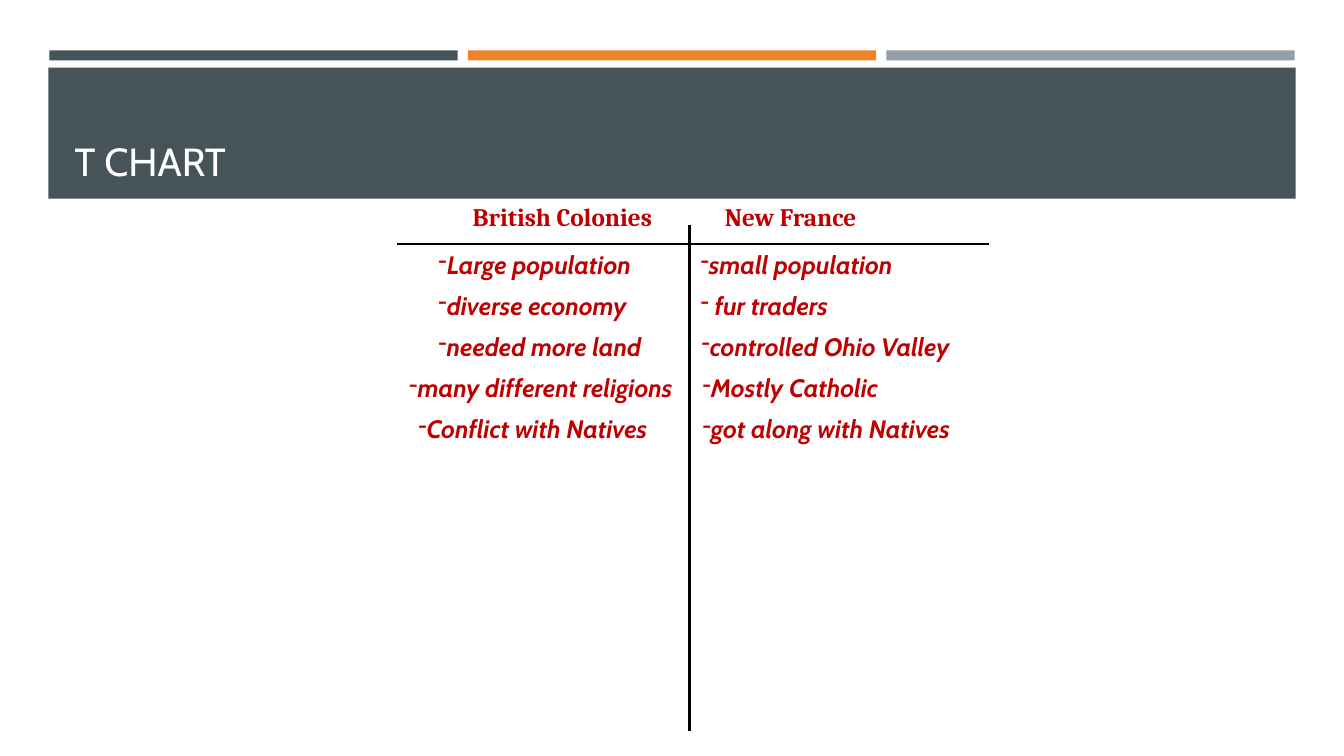
import pptx
import pptx.util
import pptx.dml.color
import pptx.enum.shapes
import pptx.enum.text
import pptx.oxml.ns
import lxml.etree

Inches = pptx.util.Inches
Pt = pptx.util.Pt
RGBColor = pptx.dml.color.RGBColor
qn = pptx.oxml.ns.qn

SLATE = RGBColor(0x46, 0x53, 0x59)
ORANGE = RGBColor(0xED, 0x84, 0x28)
GREY = RGBColor(0x96, 0x9F, 0xA7)
WHITE = RGBColor(0xFF, 0xFF, 0xFF)
BLACK = RGBColor(0x00, 0x00, 0x00)
RED = RGBColor(0xC0, 0x00, 0x00)

ROW_TOP, ROW_STEP, ROW_HEIGHT = 2.42, 0.407, 0.4

# Each entry: left, width, text
BRITISH_POINTS = [
    (4.25, 2.19, "Large population"),
    (4.25, 2.11, "diverse economy"),
    (4.25, 2.27, "needed more land"),
    (3.96, 2.89, "many different religions"),
    (4.05, 2.61, "Conflict with Natives"),
]
FRENCH_POINTS = [
    (6.85, 2.14, "small population"),
    (6.85, 1.52, " fur traders"),
    (6.86, 2.7, "controlled Ohio Valley"),
    (6.87, 2.05, "Mostly Catholic"),
    (6.87, 2.77, "got along with Natives"),
]


def add_bar(slide, left, top, width, height, color):
    bar = slide.shapes.add_shape(
        pptx.enum.shapes.MSO_SHAPE.RECTANGLE,
        Inches(left), Inches(top), Inches(width), Inches(height))
    bar.shadow.inherit = False
    bar.fill.solid()
    bar.fill.fore_color.rgb = color
    bar.line.fill.background()


def add_rule(slide, x1, y1, x2, y2):
    rule = slide.shapes.add_connector(
        pptx.enum.shapes.MSO_CONNECTOR.STRAIGHT,
        Inches(x1), Inches(y1), Inches(x2), Inches(y2))
    rule.line.color.rgb = BLACK
    rule.line.width = Pt(1.75)
    lxml.etree.SubElement(rule._element.spPr, qn("a:effectLst"))


def style_text(paragraph, font_name, size, color, bold=False, italic=False):
    for run in paragraph.runs:
        run.font.name = font_name
        run.font.size = Pt(size)
        run.font.color.rgb = color
        run.font.bold = bold
        run.font.italic = italic


def add_label(slide, left, top, width, text, wrap):
    label = slide.shapes.add_textbox(
        Inches(left), Inches(top), Inches(width), Inches(ROW_HEIGHT))
    frame = label.text_frame
    frame.word_wrap = wrap
    frame.auto_size = pptx.enum.text.MSO_AUTO_SIZE.SHAPE_TO_FIT_TEXT
    frame.text = text
    return frame.paragraphs[0]


def add_points(slide, points):
    for row, (left, width, text) in enumerate(points):
        point = add_label(slide, left, ROW_TOP + row * ROW_STEP, width, text, False)
        style_text(point, "Cabin", 18, RED, bold=True, italic=True)
        properties = point._p.get_or_add_pPr()
        lxml.etree.SubElement(properties, qn("a:buChar")).set("char", "-")


def set_title(slide, text):
    title = slide.shapes.title
    title.left, title.top = Inches(0.64), Inches(0.77)
    title.width, title.height = Inches(12.06), Inches(1.11)
    frame = title.text_frame
    frame.text = text
    frame.auto_size = pptx.enum.text.MSO_AUTO_SIZE.NONE
    frame.vertical_anchor = pptx.enum.text.MSO_ANCHOR.BOTTOM
    frame.paragraphs[0].alignment = pptx.enum.text.PP_ALIGN.LEFT
    style_text(frame.paragraphs[0], "Cabin", 28, WHITE)
    # Bring the title in front of its band
    title._element.getparent().append(title._element)


def main():
    presentation = pptx.Presentation()
    presentation.slide_width = Inches(13.33)
    presentation.slide_height = Inches(7.5)
    slide = presentation.slides.add_slide(presentation.slide_layouts[5])

    # Header bars and title band
    for column, color in enumerate((SLATE, ORANGE, GREY)):
        add_bar(slide, 0.49 + column * 4.15, 0.5, 4.05, 0.1, color)
    add_bar(slide, 0.48, 0.67, 12.37, 1.3, SLATE)
    set_title(slide, "T CHART")

    # The T
    add_rule(slide, 3.94, 2.42, 9.81, 2.42)
    add_rule(slide, 6.84, 2.23, 6.84, 7.25)

    # Column headings and points
    headings = add_label(slide, 4.59, 1.95, 4.14, "British Colonies\t\tNew France", True)
    style_text(headings, "Cambria", 18, RED, bold=True)
    add_points(slide, BRITISH_POINTS)
    add_points(slide, FRENCH_POINTS)

    presentation.save("out.pptx")


if __name__ == "__main__":
    main()
